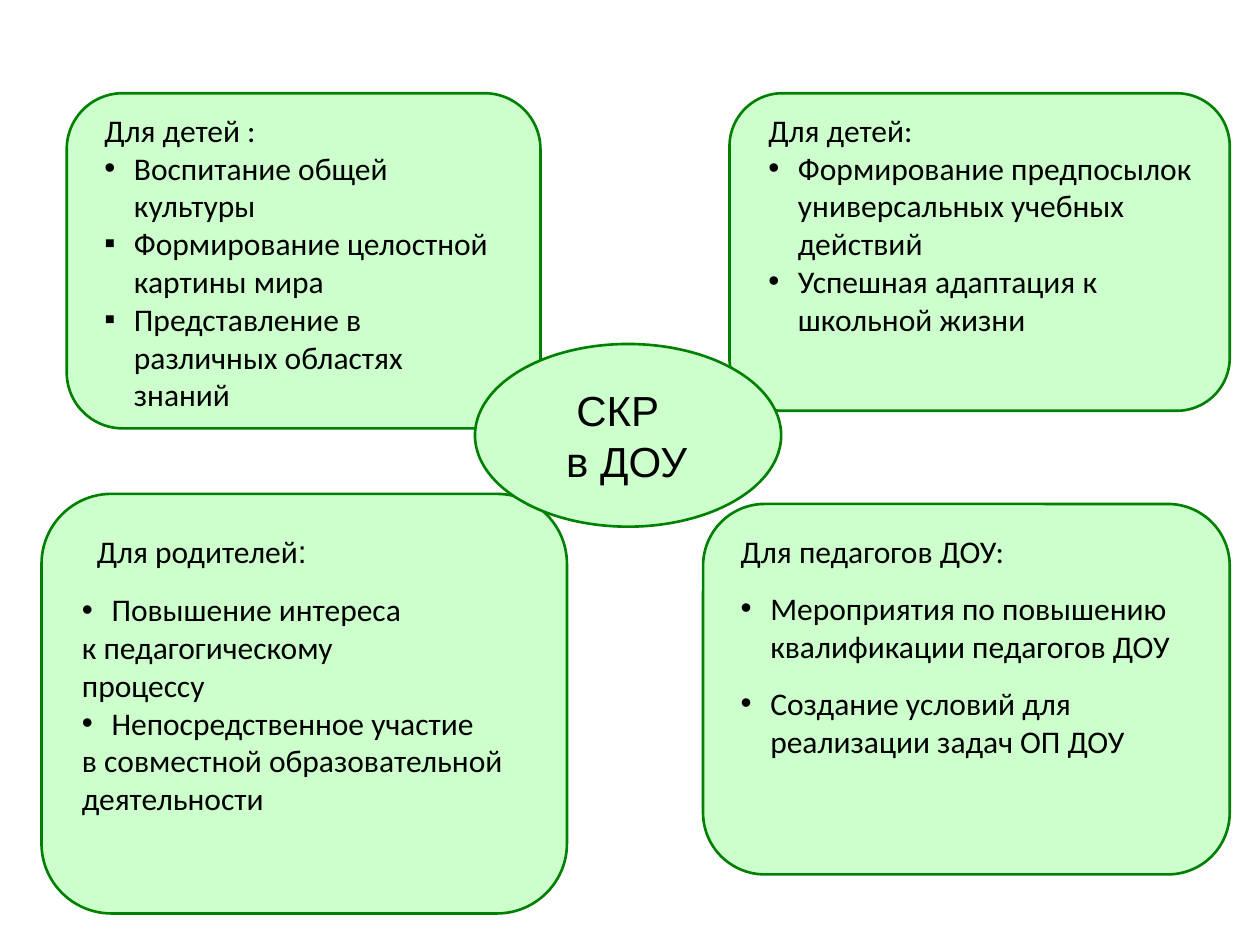
"""Build the slide on what the programme gives children, parents and teachers."""
from dataclasses import dataclass

from lxml.etree import SubElement
from pptx import Presentation
from pptx.dml.color import RGBColor
from pptx.enum.shapes import MSO_SHAPE as Preset
from pptx.enum.text import MSO_ANCHOR as Anchor, MSO_AUTO_SIZE as AutoSize, PP_ALIGN as Align
from pptx.oxml.ns import qn
from pptx.util import Inches, Pt

COLORS = {"fill": "CCFFCC", "line": "008000", "text": "000000"}
HANGING = 0.235


@dataclass(frozen=True)
class Frame:
    left: float
    top: float
    width: float
    height: float

    def lengths(self) -> list:
        return [Inches(n) for n in (self.left, self.top, self.width, self.height)]


@dataclass(frozen=True)
class Line:
    text: str
    bullet: str = ""
    indent: float = 0
    tail: str = ""


@dataclass(frozen=True)
class Caption:
    frame: Frame
    lines: tuple
    gap: float = 0
    wrap: bool = True


CARDS = {
    "knowledge": Frame(0.53, 0.74, 3.76, 2.66),
    "school": Frame(5.79, 0.74, 3.97, 2.52),
    "teachers": Frame(5.58, 4, 4.18, 2.94),
    "parents": Frame(0.33, 3.92, 4.17, 3.33),
}
HUB = Frame(3.77, 2.73, 2.43, 1.45)
HUB_LINES = (Line("СКР", indent=0.35), Line("в ДОУ", indent=0.27))
PARENT_LINES = (
    Line("Повышение интереса", "•", 0.06),
    Line("к педагогическому", indent=0.06),
    Line("процессу", indent=0.06),
    Line("Непосредственное участие", "•", 0.06),
    Line("в совместной образовательной", indent=0.06),
    Line("деятельности", indent=0.06),
)
CAPTIONS = (
    Caption(Frame(0.73, 0.83, 3.33, 2.2), (
        Line("Для детей :"),
        Line("Воспитание общей культуры", "•"),
        Line("Формирование целостной картины мира", "▪"),
        Line("Представление в различных областях знаний", "▪"),
    )),
    Caption(Frame(5.78, 4.17, 3.88, 2.37), (
        Line("Для педагогов ДОУ:"),
        Line("Мероприятия по повышению квалификации педагогов ДОУ", "•"),
        Line("Создание условий для реализации задач ОП ДОУ", "•"),
    ), gap=11.2),
    Caption(Frame(6, 0.83, 3.67, 2.2), (
        Line("Для детей:"),
        Line("Формирование предпосылок универсальных учебных действий", "•"),
        Line("Успешная адаптация к школьной жизни", "•"),
    )),
    Caption(Frame(0.67, 4.17, 1.88, 0.4), (Line("Для родителей", tail=":"),), wrap=False),
)


def color(name: str) -> RGBColor:
    return RGBColor.from_string(COLORS[name])


def write(text_frame, lines: tuple, size: int = 18, font: str = "Calibri", gap: float = 0) -> None:
    for index, line in enumerate(lines):
        para = text_frame.paragraphs[0] if index == 0 else text_frame.add_paragraph()
        para.alignment = Align.LEFT
        para.space_before = Pt(gap if index else 0)
        properties = para._p.get_or_add_pPr()
        hanging = HANGING if line.bullet else 0
        properties.set("marL", str(Inches(line.indent + hanging)))
        properties.set("indent", str(-Inches(hanging)))
        if line.bullet:
            SubElement(properties, qn("a:buFont"), typeface="Arial")
            SubElement(properties, qn("a:buChar"), char=line.bullet)
        para.font.size = Pt(size)
        para.font.name = font
        para.font.color.rgb = color("text")
        para.add_run().text = line.text
        if line.tail:
            span = para.add_run()
            span.text = line.tail
            span.font.name = "Arial"


def add_panel(page, preset: Preset, frame: Frame):
    panel = page.shapes.add_shape(preset, *frame.lengths())
    panel.shadow.inherit = False
    panel.fill.solid()
    panel.fill.fore_color.rgb = color("fill")
    panel.line.color.rgb = color("line")
    panel.line.width = Pt(1.5)
    panel.text_frame.word_wrap = True
    panel.text_frame.vertical_anchor = Anchor.MIDDLE
    return panel


def add_caption(page, caption: Caption) -> None:
    box = page.shapes.add_textbox(*caption.frame.lengths())
    box.text_frame.word_wrap = caption.wrap
    box.text_frame.auto_size = AutoSize.SHAPE_TO_FIT_TEXT
    write(box.text_frame, caption.lines, gap=caption.gap)


def main() -> None:
    deck = Presentation()
    deck.slide_width, deck.slide_height = Inches(10), Inches(7.5)
    page = deck.slides.add_slide(deck.slide_layouts[6])
    cards = {
        name: add_panel(page, Preset.FLOWCHART_ALTERNATE_PROCESS, frame)
        for name, frame in CARDS.items()
    }
    write(cards["parents"].text_frame, PARENT_LINES)
    hub = add_panel(page, Preset.OVAL, HUB)
    write(hub.text_frame, HUB_LINES, size=24, font="Arial")
    for caption in CAPTIONS:
        add_caption(page, caption)
    deck.save("out.pptx")


if __name__ == "__main__":
    main()
